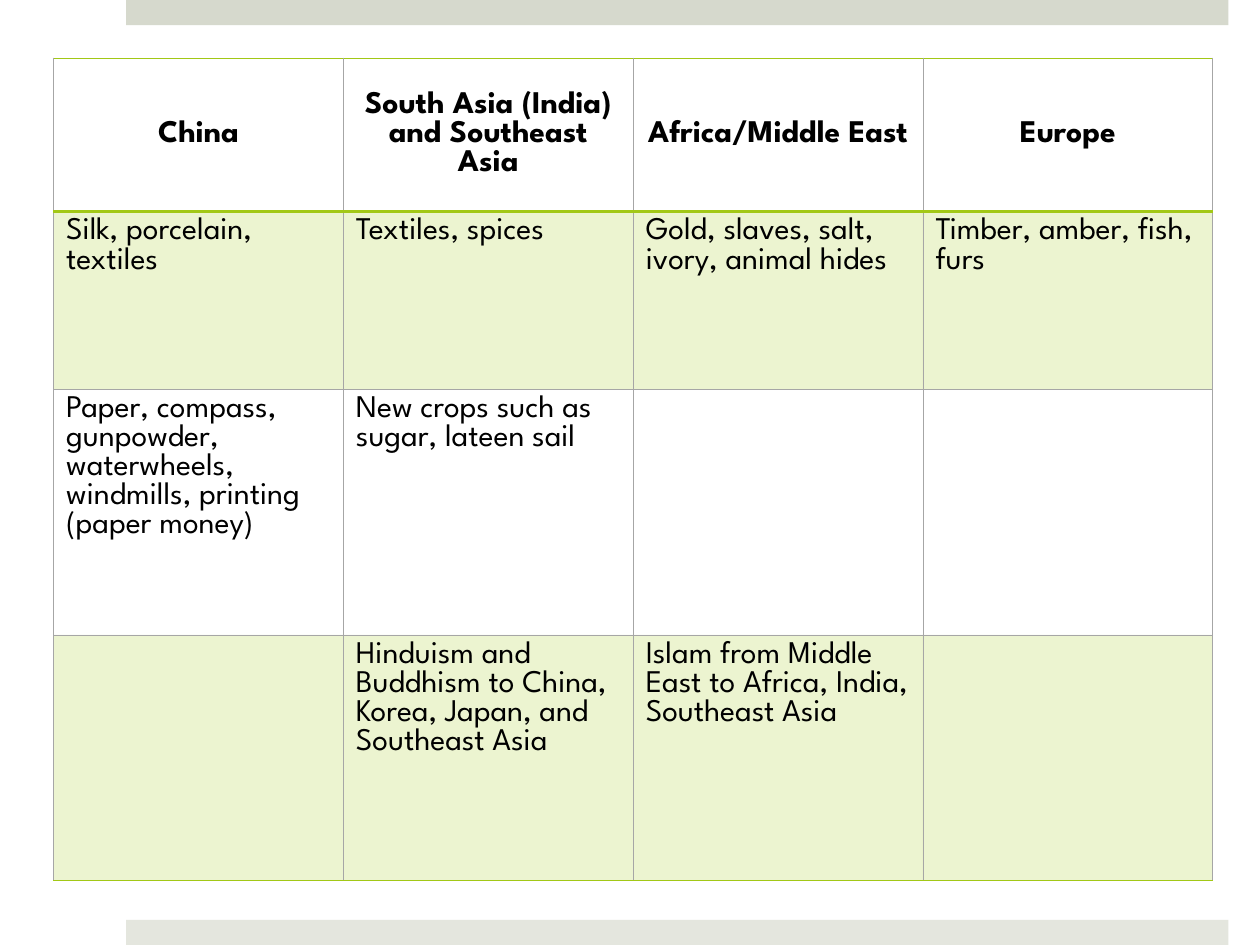
from dataclasses import dataclass

from lxml import etree
from pptx import Presentation
from pptx.dml.color import RGBColor
from pptx.enum import shapes, text
from pptx.oxml import ns
from pptx.util import Pt


@dataclass(frozen=True)
class Theme:
    font: str = "League Spartan"
    size: int = 18
    ink: str = "000000"
    accent: str = "A2C816"
    grid: str = "A6A6A6"
    top_band: str = "D6D9CD"
    bottom_band: str = "E4E6DE"
    stripe_opacity: int = 20
    thin: float = 0.5
    medium: float = 1
    thick: float = 2


NO_STYLE = "{2D5ABB26-0587-4C30-8999-92F81FD0307C}"
GOODS = [
    ["China", "South Asia (India) and Southeast Asia", "Africa/Middle East", "Europe"],
    ["Silk, porcelain, textiles", "Textiles, spices",
     "Gold, slaves, salt, ivory, animal hides", "Timber, amber, fish, furs"],
    ["Paper, compass, gunpowder, waterwheels, windmills, printing (paper money)",
     "New crops such as sugar, lateen sail", "", ""],
    ["", "Hinduism and Buddhism to China, Korea, Japan, and Southeast Asia",
     "Islam from Middle East to Africa, India, Southeast Asia", ""],
]
ROW_HEIGHTS = [87.84, 101.52, 140.4, 140.4]
COLUMN_WIDTH = 165.6


class SlideBuilder:
    def __init__(self, slide, theme):
        self.slide = slide
        self.theme = theme

    def band(self, left, top, width, height, color):
        bar = self.slide.shapes.add_shape(
            shapes.MSO_SHAPE.RECTANGLE, Pt(left), Pt(top), Pt(width), Pt(height))
        bar.shadow.inherit = False
        bar.fill.solid()
        bar.fill.fore_color.rgb = RGBColor.from_string(color)
        bar.line.fill.background()

    def table(self, left, top, column_width, row_heights, rows):
        columns = len(rows[0])
        frame = self.slide.shapes.add_table(
            len(rows), columns, Pt(left), Pt(top),
            Pt(column_width * columns), Pt(sum(row_heights)))
        grid = frame.table
        grid._tbl.tblPr.find(ns.qn("a:tableStyleId")).text = NO_STYLE
        for column in grid.columns:
            column.width = Pt(column_width)
        for r, (height, entries) in enumerate(zip(row_heights, rows)):
            grid.rows[r].height = Pt(height)
            for c, entry in enumerate(entries):
                cell = grid.cell(r, c)
                self.label(cell, entry, header=r == 0)
                self.stripe(cell, r % 2 == 1)
                self.borders(cell, self.rule(r, len(rows)), self.rule(r + 1, len(rows)))

    def label(self, cell, entry, header):
        cell.text = entry
        paragraph = cell.text_frame.paragraphs[0]
        font = paragraph.font
        font.name, font.size, font.bold = self.theme.font, Pt(self.theme.size), header
        font.color.rgb = RGBColor.from_string(self.theme.ink)
        if header:
            paragraph.alignment = text.PP_ALIGN.CENTER
            cell.vertical_anchor = text.MSO_ANCHOR.MIDDLE

    def stripe(self, cell, shaded):
        if not shaded:
            cell.fill.background()
            return
        cell.fill.solid()
        cell.fill.fore_color.rgb = RGBColor.from_string(self.theme.accent)
        color = cell._tc.tcPr.find(".//" + ns.qn("a:srgbClr"))
        etree.SubElement(color, ns.qn("a:alpha"), val=str(self.theme.stripe_opacity * 1000))

    def rule(self, index, row_count):
        """Colour and width of the horizontal line above row `index`."""
        accents = {0: self.theme.thin, 1: self.theme.thick, row_count: self.theme.medium}
        if index in accents:
            return self.theme.accent, accents[index]
        return self.theme.grid, self.theme.thin

    def borders(self, cell, above, below):
        side = (self.theme.grid, self.theme.thin)
        edges = {"a:lnL": side, "a:lnR": side, "a:lnT": above, "a:lnB": below}
        properties = cell._tc.get_or_add_tcPr()
        # The schema wants border lines ahead of the cell fill.
        for position, (tag, (color, width)) in enumerate(edges.items()):
            line = etree.Element(ns.qn(tag), w=str(int(Pt(width))))
            fill = etree.SubElement(line, ns.qn("a:solidFill"))
            etree.SubElement(fill, ns.qn("a:srgbClr"), val=color)
            properties.insert(position, line)


def main():
    deck = Presentation()
    deck.slide_width, deck.slide_height = Pt(720), Pt(540)
    theme = Theme()
    builder = SlideBuilder(deck.slides.add_slide(deck.slide_layouts[6]), theme)
    builder.band(72, 0, 630, 14.4, theme.top_band)
    builder.band(72, 525.6, 630, 14.4, theme.bottom_band)
    builder.table(30.6, 33.12, COLUMN_WIDTH, ROW_HEIGHTS, GOODS)
    deck.save("out.pptx")


if __name__ == "__main__":
    main()
